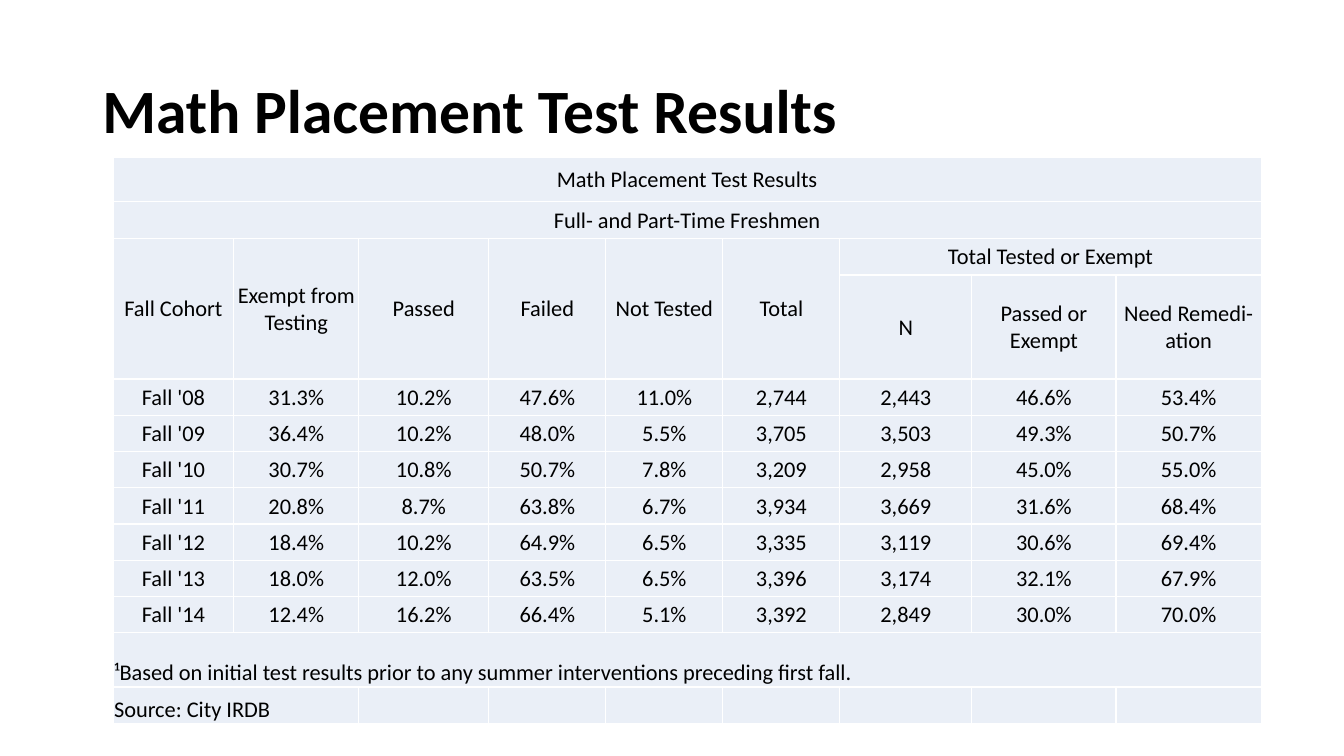
"""Build the math placement test results slide."""
import pptx
import pptx.dml.color
import pptx.enum.text
import pptx.oxml
import pptx.oxml.ns
import pptx.util

Pt = pptx.util.Pt
ALIGN = pptx.enum.text.PP_ALIGN
ANCHOR = pptx.enum.text.MSO_ANCHOR
FONT = "Calibri"
COLORS = {"text": "000000", "cell": "EAEFF7", "border": "FFFFFF"}

COL_WIDTHS = [86.2, 89.3, 92.9, 83.6, 83.6, 83.6, 94.3, 103, 103.7]
ROW_HEIGHTS = [31.5, 26.2, 26.2, 74.2] + [25.92] * 7 + [38.7, 26.1]
HEADERS = ["Fall Cohort", "Exempt from Testing", "Passed", "Failed", "Not Tested", "Total"]
SUBHEADERS = ["N", "Passed or Exempt", "Need Remedi-ation"]
COHORTS = [
    ["Fall '08", "31.3%", "10.2%", "47.6%", "11.0%", "2,744", "2,443", "46.6%", "53.4%"],
    ["Fall '09", "36.4%", "10.2%", "48.0%", "5.5%", "3,705", "3,503", "49.3%", "50.7%"],
    ["Fall '10", "30.7%", "10.8%", "50.7%", "7.8%", "3,209", "2,958", "45.0%", "55.0%"],
    ["Fall '11", "20.8%", "8.7%", "63.8%", "6.7%", "3,934", "3,669", "31.6%", "68.4%"],
    ["Fall '12", "18.4%", "10.2%", "64.9%", "6.5%", "3,335", "3,119", "30.6%", "69.4%"],
    ["Fall '13", "18.0%", "12.0%", "63.5%", "6.5%", "3,396", "3,174", "32.1%", "67.9%"],
    ["Fall '14", "12.4%", "16.2%", "66.4%", "5.1%", "3,392", "2,849", "30.0%", "70.0%"],
]
FOOTNOTE = "¹Based on initial test results prior to any summer interventions preceding first fall."


def rgb(name):
    """Return a named colour."""
    return pptx.dml.color.RGBColor.from_string(COLORS[name])


def add_run(p, text, size, bold=False):
    """Add one styled run to a paragraph."""
    r = p.add_run()
    r.text = text
    r.font.name = FONT
    r.font.size = Pt(size)
    r.font.bold = bold
    r.font.color.rgb = rgb("text")


def add_title(s, text):
    """Add the slide title."""
    sp = s.shapes.add_textbox(Pt(66), Pt(28.8), Pt(828), Pt(104.4))
    tf = sp.text_frame
    tf.word_wrap = True
    tf.vertical_anchor = ANCHOR.MIDDLE
    p = tf.paragraphs[0]
    p.line_spacing = 0.9
    add_run(p, text, 44, True)


def style_cell(cell):
    """Set the margins, borders and fill of a cell."""
    cell.margin_left = cell.margin_right = cell.margin_top = Pt(0.7)
    cell.margin_bottom = 0
    tcPr = cell._tc.get_or_add_tcPr()
    for side in "LRTB":
        tcPr.append(pptx.oxml.parse_xml(
            f'<a:ln{side} {pptx.oxml.ns.nsdecls("a")} w="{Pt(1)}"><a:solidFill>'
            f'<a:srgbClr val="{COLORS["border"]}"/></a:solidFill></a:ln{side}>'))
    cell.fill.solid()
    cell.fill.fore_color.rgb = rgb("cell")


def fill_cell(table, row, col, text, rows=1, cols=1, align=ALIGN.CENTER, anchor=ANCHOR.MIDDLE):
    """Write text into a cell, merged over the given rows and columns."""
    cell = table.cell(row, col)
    if rows > 1 or cols > 1:
        cell.merge(table.cell(row + rows - 1, col + cols - 1))
    cell.vertical_anchor = anchor
    p = cell.text_frame.paragraphs[0]
    p.alignment = align
    add_run(p, text, 16)


def add_results_table(s):
    """Add the table of results by cohort."""
    n_cols, n_rows = len(COL_WIDTHS), len(ROW_HEIGHTS)
    table = s.shapes.add_table(n_rows, n_cols, Pt(80.8), Pt(112.6),
                               Pt(sum(COL_WIDTHS)), Pt(sum(ROW_HEIGHTS))).table
    table.first_row = table.horz_banding = False
    for column, width in zip(table.columns, COL_WIDTHS):
        column.width = Pt(width)
    for row, height in zip(table.rows, ROW_HEIGHTS):
        row.height = Pt(height)
    for cell in table.iter_cells():
        style_cell(cell)

    fill_cell(table, 0, 0, "Math Placement Test Results", cols=n_cols)
    fill_cell(table, 1, 0, "Full- and Part-Time Freshmen", cols=n_cols)
    for col, text in enumerate(HEADERS):
        fill_cell(table, 2, col, text, rows=2)
    fill_cell(table, 2, len(HEADERS), "Total Tested or Exempt", cols=len(SUBHEADERS))
    for col, text in enumerate(SUBHEADERS, len(HEADERS)):
        fill_cell(table, 3, col, text)
    for row, values in enumerate(COHORTS, 4):
        for col, text in enumerate(values):
            fill_cell(table, row, col, text)
    for row, text, cols in [(n_rows - 2, FOOTNOTE, n_cols), (n_rows - 1, "Source: City IRDB", 2)]:
        fill_cell(table, row, 0, text, cols=cols, align=ALIGN.LEFT, anchor=ANCHOR.BOTTOM)


def main():
    """Build and save the slide."""
    prs = pptx.Presentation()
    prs.slide_width, prs.slide_height = Pt(960), Pt(540)
    s = prs.slides.add_slide(prs.slide_layouts[6])
    add_title(s, "Math Placement Test Results")
    add_results_table(s)
    prs.save("out.pptx")


if __name__ == "__main__":
    main()
